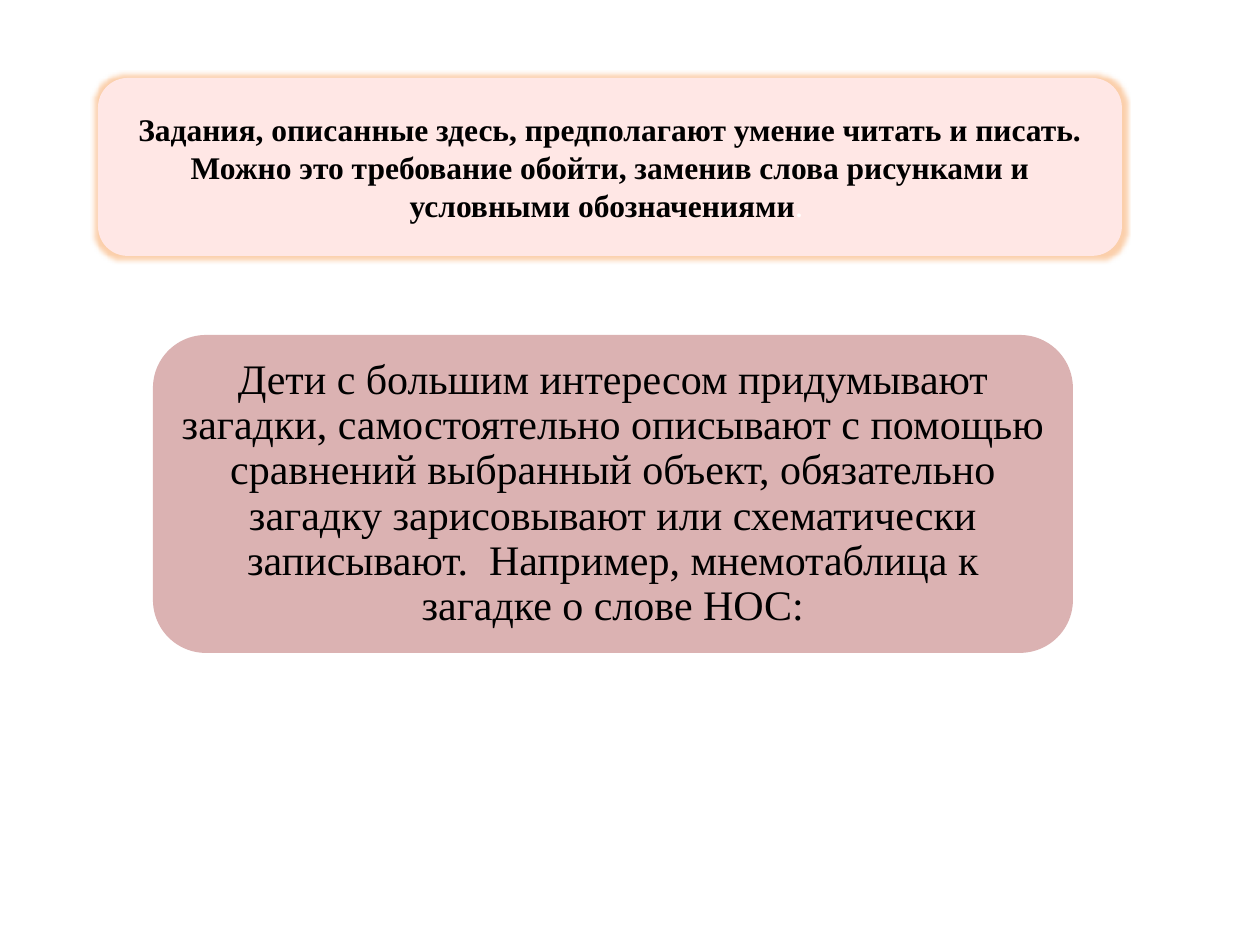
from lxml import etree
from pptx import Presentation
from pptx.dml.color import RGBColor
from pptx.enum.shapes import MSO_SHAPE
from pptx.enum.text import MSO_ANCHOR, PP_ALIGN
from pptx.oxml import parse_xml
from pptx.oxml.ns import nsdecls, qn
from pptx.util import Pt

PX = 914400 // 126
ROUNDED = MSO_SHAPE.ROUNDED_RECTANGLE
MIDDLE = MSO_ANCHOR.MIDDLE
CENTER = PP_ALIGN.CENTER
LIGHT_PINK = RGBColor(0xFF, 0xE7, 0xE5)
DUSTY_PINK = RGBColor(0xDB, 0xB2, 0xB2)
BLACK = RGBColor(0, 0, 0)
WHITE = RGBColor(0xFF, 0xFF, 0xFF)

presentation = Presentation()
presentation.slide_width = 1260 * PX
presentation.slide_height = 945 * PX
slide = presentation.slides.add_slide(presentation.slide_layouts[6])


def add_panel(left, top, width, height, fill, text, size, bold):
    shape = slide.shapes.add_shape(ROUNDED, left * PX, top * PX, width * PX, height * PX)
    shape.shadow.inherit = False
    shape.fill.solid()
    shape.fill.fore_color.rgb = fill
    shape.line.fill.background()
    text_frame = shape.text_frame
    text_frame.word_wrap = True
    text_frame.vertical_anchor = MIDDLE
    text_frame.margin_left = text_frame.margin_right = 12 * PX
    text_frame.text = text
    paragraph = text_frame.paragraphs[0]
    paragraph.alignment = CENTER
    font = paragraph.runs[0].font
    font.name = "Times New Roman"
    font.size = Pt(size)
    font.bold = bold
    font.color.rgb = BLACK
    return shape


riddles = add_panel(
    153, 335, 920, 318, DUSTY_PINK,
    "Дети с большим интересом придумывают загадки, самостоятельно описывают "
    "с помощью сравнений выбранный объект, обязательно загадку зарисовывают "
    "или схематически записывают.  Например, мнемотаблица к загадке о слове НОС:",
    24, False)
riddles.text_frame.paragraphs[0].line_spacing = 0.9

requirement = add_panel(
    98, 78, 1024, 178, LIGHT_PINK,
    "Задания, описанные здесь, предполагают умение читать и писать. Можно это "
    "требование обойти, заменив слова рисунками и условными обозначениями",
    18, True)
full_stop = requirement.text_frame.paragraphs[0].add_run()
full_stop.text = ". "
full_stop.font.name = "Calibri"
full_stop.font.size = Pt(18)
full_stop.font.bold = False
full_stop.font.color.rgb = WHITE

effects = requirement.element.spPr.find(qn("a:effectLst"))
glow = parse_xml(f'<a:glow {nsdecls("a")} rad="63500"/>')
color = etree.SubElement(glow, qn("a:srgbClr"), val="F79646")
etree.SubElement(color, qn("a:alpha"), val="45000")
effects.append(glow)

presentation.save("out.pptx")
